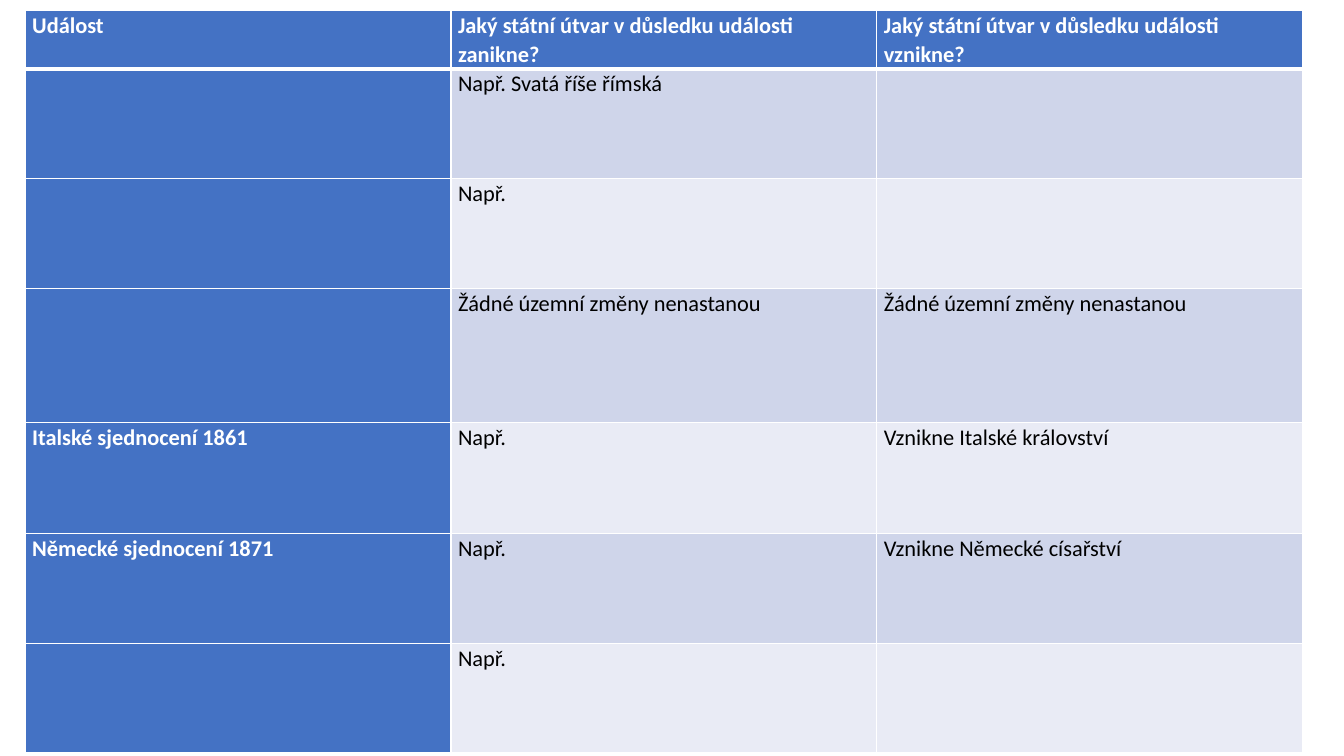
from lxml import etree
from pptx import Presentation
from pptx.dml.color import RGBColor
from pptx.oxml import ns
from pptx.util import Inches, Pt

BLUE, WHITE, BLACK = "4472C4", "FFFFFF", "000000"
BANDS = ["CFD5EA", "E9EBF5"]

ROWS = [
    ("Událost", "Jaký státní útvar v důsledku události zanikne?",
     "Jaký státní útvar v důsledku události vznikne?"),
    ("", "Např. Svatá říše římská", ""),
    ("", "Např.", ""),
    ("", "Žádné územní změny nenastanou", "Žádné územní změny nenastanou"),
    ("Italské sjednocení 1861", "Např.", "Vznikne Italské království"),
    ("Německé sjednocení 1871", "Např.", "Vznikne Německé císařství"),
    ("", "Např.", ""),
]
HEIGHTS = [0.58, 1.09, 1.09, 1.33, 1.1, 1.09, 1.09]


def color(code):
    return RGBColor.from_string(code)


class Deck:
    font = "Calibri"
    size = 16

    def __init__(self):
        self.prs = Presentation()
        self.prs.slide_width = Inches(13.33)
        self.prs.slide_height = Inches(7.5)
        self.slide = self.prs.slides.add_slide(self.prs.slide_layouts[6])

    def edge(self, cell, widths):
        props = cell._tc.get_or_add_tcPr()
        for spot, (side, width) in enumerate(widths.items()):
            line = etree.Element(ns.qn("a:ln" + side), w=str(Pt(width)))
            fill = etree.SubElement(line, ns.qn("a:solidFill"))
            etree.SubElement(fill, ns.qn("a:srgbClr"), val=WHITE)
            props.insert(spot, line)

    def cell(self, cell, words, fill, ink, bold):
        cell.fill.solid()
        cell.fill.fore_color.rgb = color(fill)
        cell.margin_left = cell.margin_right = Inches(0.07)
        cell.margin_top = cell.margin_bottom = 0
        cell.text = words
        para = cell.text_frame.paragraphs[0]
        para.line_spacing = 1.07
        para.space_after = Pt(8)
        para.font.name = self.font
        para.font.size = Pt(self.size)
        para.font.bold = bold
        para.font.color.rgb = color(ink)

    def table(self, left, top, width, rows, heights):
        count = len(rows[0])
        grid = self.slide.shapes.add_table(
            len(rows), count, Inches(left), Inches(top),
            Inches(width), Inches(sum(heights))).table
        grid.first_col = True
        for r, (row, height) in enumerate(zip(rows, heights)):
            grid.rows[r].height = Inches(height)
            for c, words in enumerate(row):
                head = r == 0 or c == 0
                fill = BLUE if head else BANDS[(r - 1) % 2]
                cell = grid.cell(r, c)
                self.cell(cell, words, fill, WHITE if head else BLACK, head)
                self.edge(cell, {"L": 1, "R": 1, "T": 3 if r == 1 else 1,
                                 "B": 3 if r == 0 else 1})


def main():
    deck = Deck()
    deck.table(0.25, 0.1, 12.67, ROWS, HEIGHTS)
    deck.prs.save("out.pptx")


if __name__ == "__main__":
    main()
